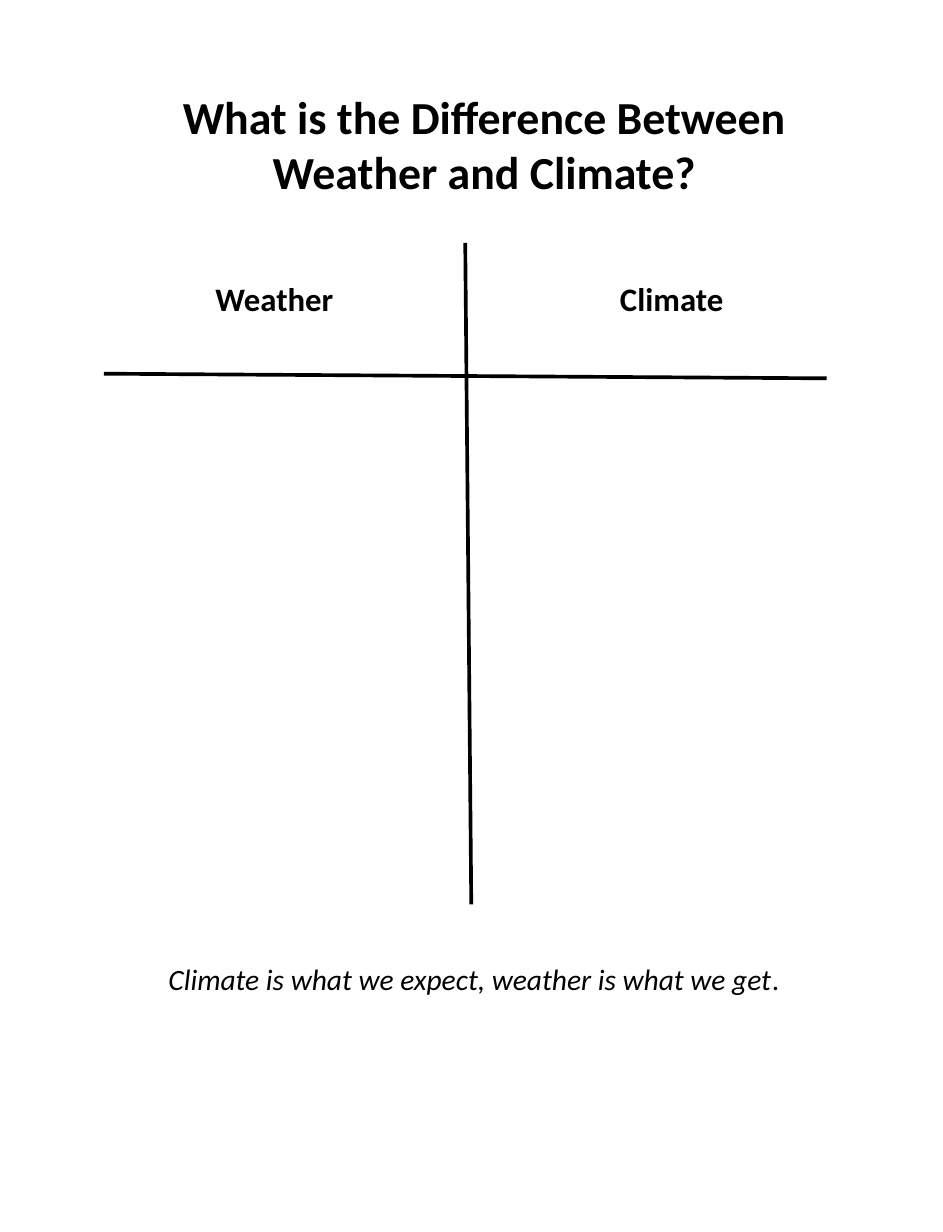
from lxml import etree
from pptx import Presentation
from pptx.dml.color import RGBColor
from pptx.enum.shapes import MSO_CONNECTOR as CONN
from pptx.enum.text import MSO_ANCHOR as ANCHOR, MSO_AUTO_SIZE as FIT, PP_ALIGN as ALIGN
from pptx.oxml.ns import qn
from pptx.util import Cm, Pt

BLACK = "000000"


def color(hex_code):
    return RGBColor.from_string(hex_code)


def write(sp, text, size=18, bold=False, italic=False, align=ALIGN.LEFT, wrap=True):
    tf = sp.text_frame
    tf.word_wrap = wrap
    tf.auto_size = FIT.SHAPE_TO_FIT_TEXT
    tf.vertical_anchor = ANCHOR.TOP
    p = tf.paragraphs[0]
    p.alignment = align
    return add_run(p, text, size, bold, italic)


def add_run(p, text, size, bold=False, italic=False):
    r = p.add_run()
    r.text = text
    r.font.name = "Calibri"
    r.font.size = Pt(size)
    r.font.bold = bold
    r.font.italic = italic
    r.font.color.rgb = color(BLACK)
    return r


def add_box(s, x, y, w, h):
    return s.shapes.add_textbox(Cm(x), Cm(y), Cm(w), Cm(h))


def add_line(s, x1, y1, x2, y2):
    line = s.shapes.add_connector(CONN.STRAIGHT, Cm(x1), Cm(y1), Cm(x2), Cm(y2))
    line.line.color.rgb = color(BLACK)
    line.line.width = Pt(2.25)
    etree.SubElement(line._element.spPr, qn("a:effectLst"))


def add_title(s, x, y, w, h):
    sp = s.shapes.title
    sp.left, sp.top, sp.width, sp.height = Cm(x), Cm(y), Cm(w), Cm(h)
    write(sp, "What is the Difference Between Weather and Climate?",
          size=28, bold=True, align=ALIGN.CENTER)


def add_t_chart(s, x, y, w, h):
    for heading, dx, width in (("Weather", 2.15, 3.07), ("Climate", 10.87, 2.77)):
        sp = add_box(s, x + dx, y + 0.64, width, 1.12)
        write(sp, heading, size=20, bold=True, wrap=False)
    add_line(s, x, y + 2.82, x + w, y + 2.92)
    add_line(s, x + w / 2, y, x + w / 2 + 0.13, y + h)


def add_saying(s, x, y, w, h):
    sp = add_box(s, x, y, w, h)
    write(sp, "Climate is what we expect, weather is what we get", italic=True)
    add_run(sp.text_frame.paragraphs[0], ".", 18)


def main():
    prs = Presentation()
    prs.slide_width, prs.slide_height = Cm(20.32), Cm(26.54)
    s = prs.slides.add_slide(prs.slide_layouts[5])
    add_title(s, 3.05, 1.78, 14.76, 2.64)
    add_t_chart(s, 2.24, 5.23, 15.57, 14.25)
    add_saying(s, 3.38, 20.57, 14.1, 1.02)
    prs.save("out.pptx")


if __name__ == "__main__":
    main()
